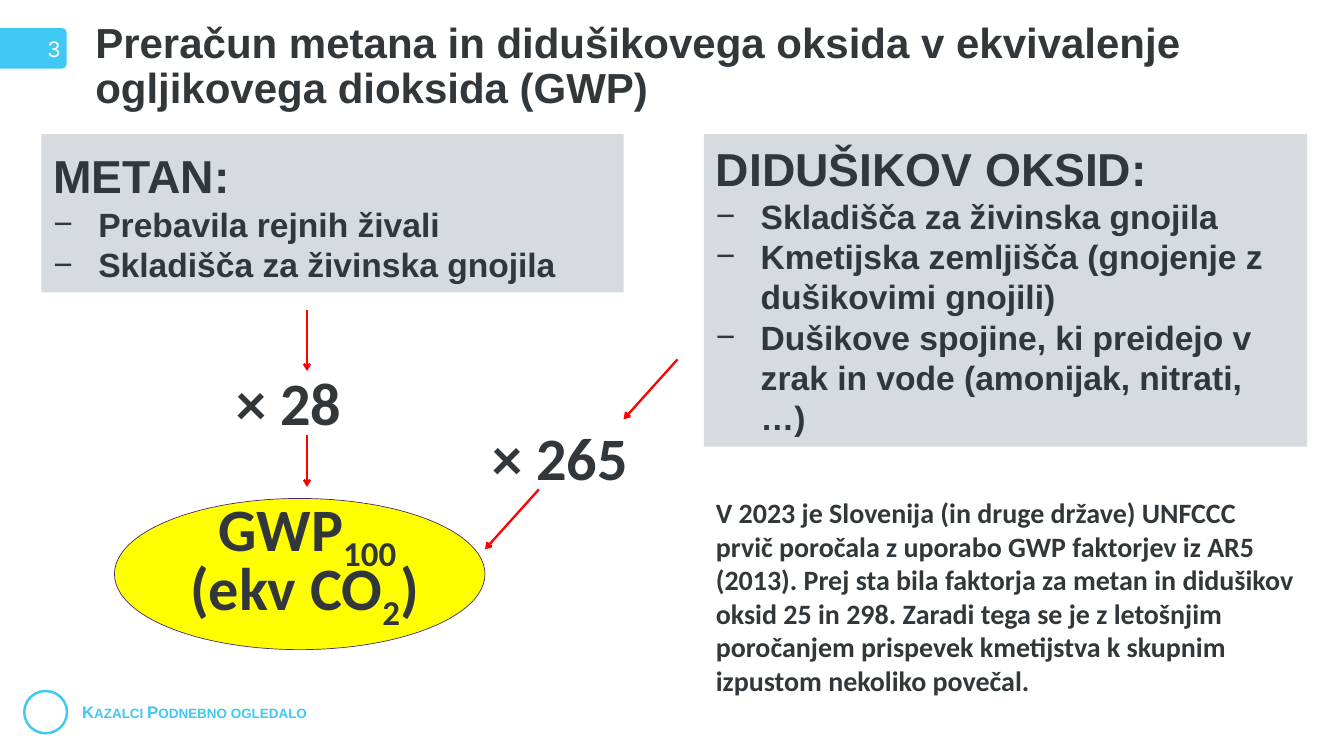
"""Build the slide on converting methane and nitrous oxide to CO2 equivalents."""
import pptx
import pptx.dml.color
import pptx.enum.shapes
import pptx.enum.text
import pptx.oxml.ns
import pptx.util
import lxml.etree

SCALE = 9144
INK, SKY, GREY, RED = "31373B", "40C8F4", "D7DADF", "FF0000"
KIND = pptx.enum.shapes.MSO_SHAPE
ALIGN = pptx.enum.text.PP_ALIGN
ANCHOR = pptx.enum.text.MSO_ANCHOR
FIT = pptx.enum.text.MSO_AUTO_SIZE


def px(n):
    """Turn px into EMU."""
    return pptx.util.Emu(n * SCALE)


def color(code):
    """Turn a hex string into a colour."""
    return pptx.dml.color.RGBColor.from_string(code)


def child(node, tag, **attrs):
    """Append a DrawingML element to a node."""
    return lxml.etree.SubElement(node, pptx.oxml.ns.qn(tag), attrs)


def put(item, box):
    """Place a shape at left, top, width, height."""
    item.left, item.top, item.width, item.height = map(px, box)


def write(para, text, size, face="Arial", tint=INK, bold=True, **attrs):
    """Add one formatted run, with extra run attributes."""
    run = para.add_run()
    run.text = text
    font = run.font
    font.size, font.name, font.bold = pptx.util.Pt(size), face, bold
    font.color.rgb = color(tint)
    for key, value in attrs.items():
        run._r.get_or_add_rPr().set(key, value)


def pad(frame):
    """Wrap a frame and give it wide margins."""
    frame.word_wrap = True
    frame.auto_size = FIT.NONE
    frame.vertical_anchor = ANCHOR.TOP
    frame.margin_left = frame.margin_right = px(24)
    frame.margin_top = frame.margin_bottom = px(12)


def shape(slide, kind, box, fill=None, line=None, width=1):
    """Add a preset shape with a plain fill and outline."""
    item = slide.shapes.add_shape(kind, *map(px, box))
    item.shadow.inherit = False
    if fill:
        item.fill.solid()
        item.fill.fore_color.rgb = color(fill)
    else:
        item.fill.background()
    if line:
        item.line.color.rgb = color(line)
        item.line.width = pptx.util.Pt(width)
    else:
        item.line.fill.background()
    return item


def label(slide, box, lines, size, align=ALIGN.LEFT, space=None):
    """Add a Calibri text box; each line is a list of text and baseline pairs."""
    frame = slide.shapes.add_textbox(*map(px, box)).text_frame
    pad(frame)
    for i, parts in enumerate(lines):
        para = frame.add_paragraph() if i else frame.paragraphs[0]
        para.alignment = align
        if space:
            para.line_spacing = pptx.util.Pt(space)
        for text, base in parts:
            write(para, text, size, "Calibri", baseline=str(base))


def panel(body, box, head, items):
    """Fill a body placeholder with a heading and a dashed list."""
    put(body, box)
    body.fill.solid()
    body.fill.fore_color.rgb = color(GREY)
    frame = body.text_frame
    pad(frame)
    for i, parts in enumerate([head] + [[(item, 48)] for item in items]):
        para = frame.add_paragraph() if i else frame.paragraphs[0]
        para.alignment = ALIGN.LEFT
        para.space_before = pptx.util.Pt(0)
        props = para._p.get_or_add_pPr()
        step = px(89) if i else 0
        props.set("marL", str(step))
        props.set("indent", str(-step))
        if i:
            child(props, "a:buFont", typeface="Arial")
            child(props, "a:buChar", char="−")
        else:
            child(props, "a:buNone")
        for text, size in parts:
            write(para, text, size)


def arrow(slide, start, end):
    """Add a red arrow between two points."""
    item = slide.shapes.add_connector(
        pptx.enum.shapes.MSO_CONNECTOR.STRAIGHT, *map(px, start + end))
    item.line.color.rgb = color(RED)
    item.line.width = pptx.util.Pt(3.25)
    child(item.line._get_or_add_ln(), "a:tailEnd", type="arrow")
    child(item._element.spPr, "a:effectLst")


def title(slide, text):
    """Write the slide title."""
    item = slide.shapes.title
    put(item, (179, 36, 2299, 195))
    frame = item.text_frame
    frame.auto_size = FIT.NONE
    frame.vertical_anchor = ANCHOR.MIDDLE
    para = frame.paragraphs[0]
    para.alignment = ALIGN.LEFT
    para.line_spacing = 0.9
    write(para, text, 60)


def frame_marks(slide):
    """Add the page number tab and the footer."""
    tab = shape(slide, KIND.ROUNDED_RECTANGLE, (-51, 56, 183, 80), SKY)
    tab.adjustments[0] = 0.11
    tab.text_frame.vertical_anchor = ANCHOR.MIDDLE
    para = tab.text_frame.paragraphs[0]
    para.alignment = ALIGN.RIGHT
    write(para, "3", 32, tint="FFFFFF", bold=False)
    shape(slide, KIND.OVAL, (48, 1371, 85, 84), line=SKY, width=3.5)
    foot = slide.shapes.add_textbox(*map(px, (153, 1388, 574, 50))).text_frame
    foot.word_wrap = True
    write(foot.paragraphs[0], "Kazalci Podnebno ogledalo", 24, tint=SKY, cap="small")


def main():
    """Build and save the slide."""
    deck = pptx.Presentation()
    deck.slide_width, deck.slide_height = px(2666), px(1500)
    slide = deck.slides.add_slide(deck.slide_layouts[3])
    title(slide, "Preračun metana in didušikovega oksida v ekvivalenje "
                 "ogljikovega dioksida (GWP)")
    frame_marks(slide)
    left, right = slide.placeholders[1], slide.placeholders[2]
    store = "Skladišča za živinska gnojila"
    panel(left, (82, 266, 1155, 314), [("METAN:", 66), (" ", 76)],
          ["Prebavila rejnih živali", store])
    panel(right, (1396, 266, 1197, 620), [("DIDUŠIKOV OKSID:", 66)],
          [store, "Kmetijska zemljišča (gnojenje z dušikovimi gnojili)",
           "Dušikove spojine, ki preidejo v zrak in vode (amonijak, nitrati, …)"])
    shape(slide, KIND.OVAL, (227, 989, 735, 300), "FFFF00", "43296D")
    label(slide, (40, 1011, 1155, 257),
          [[("GWP", 0), ("100 ", -25000)],
           [("(ekv CO", 0), ("2", -25000), (") ", 0)]], 86, ALIGN.CENTER, 83.3)
    for x, y, text in ((367, 713, "× 28 "), (905, 821, "× 265 ")):
        label(slide, (x, y, 439, 169), [[(text, 0)]], 86, ALIGN.CENTER)
    for start, end in (((609, 616), (609, 736)), ((609, 864), (609, 966)),
                       ((1344, 713), (1237, 832)), ((1069, 971), (962, 1090))):
        arrow(slide, start, end)
    note = ("V 2023 je Slovenija (in druge države) UNFCCC prvič poročala z uporabo "
            "GWP faktorjev iz AR5 (2013). Prej sta bila faktorja za metan in "
            "didušikov oksid 25 in 298. Zaradi tega se je z letošnjim poročanjem "
            "prispevek kmetijstva k skupnim izpustom nekoliko povečal.")
    label(slide, (1396, 971, 1197, 482), [[(note, 0)]], 40)
    deck.save("out.pptx")


if __name__ == "__main__":
    main()
